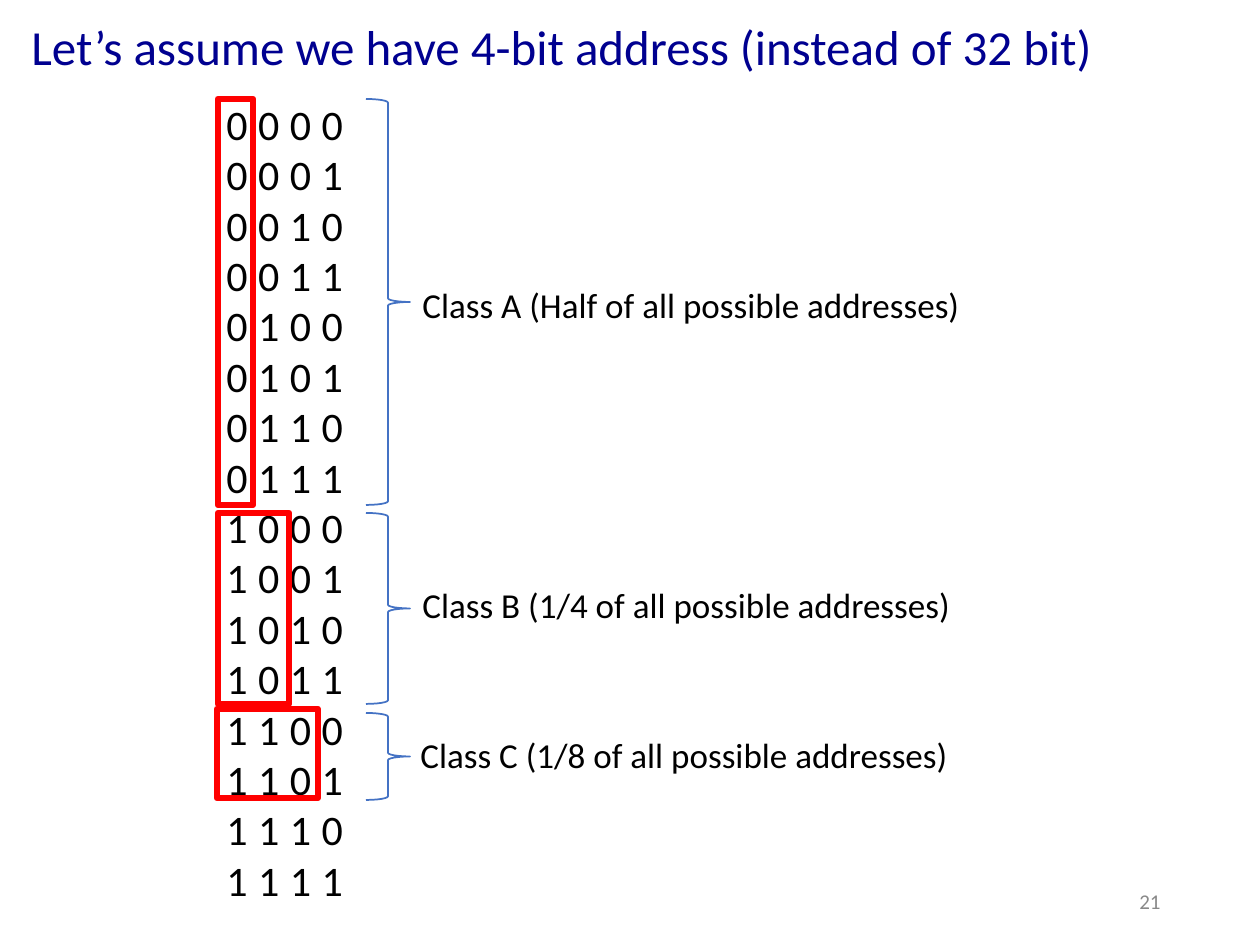
from pptx import Presentation
from pptx.dml.color import RGBColor
from pptx.enum.shapes import MSO_SHAPE
from pptx.enum.text import MSO_ANCHOR, MSO_AUTO_SIZE, PP_ALIGN
from pptx.util import Emu, Pt

PX = 914400 / 126
BLACK = RGBColor(0x00, 0x00, 0x00)
NAVY = RGBColor(0x00, 0x00, 0x90)
GRAY = RGBColor(0x89, 0x89, 0x89)
RED = RGBColor(0xFF, 0x00, 0x00)
BLUE = RGBColor(0x44, 0x72, 0xC4)

# Prefix box, brace (top, height) and caption position of each address class
CLASSES = [
    ("Class A (Half of all possible addresses)",
     (218, 99, 35, 406), (99, 406), (410, 277)),
    ("Class B (1/4 of all possible addresses)",
     (218, 513, 71, 191), (513, 191), (410, 577)),
    ("Class C (1/8 of all possible addresses)",
     (217, 709, 101, 89), (713, 87), (408, 727)),
]


def px(*lengths):
    return [Emu(round(length * PX)) for length in lengths]


def add_text(shapes, box, lines, size, color, grow=False):
    frame = shapes.add_textbox(*px(*box)).text_frame
    frame.word_wrap = True
    if grow:
        frame.auto_size = MSO_AUTO_SIZE.SHAPE_TO_FIT_TEXT
    frame.text = "\n".join(lines)
    for paragraph in frame.paragraphs:
        paragraph.font.name = "Calibri"
        paragraph.font.size = Pt(size)
        paragraph.font.color.rgb = color
    return frame


def add_outline(shapes, kind, box, color, width):
    outline = shapes.add_shape(kind, *px(*box))
    outline.shadow.inherit = False
    outline.fill.background()
    outline.line.color.rgb = color
    outline.line.width = Pt(width)


def add_addresses(shapes):
    addresses = [f"{number:04b}" for number in range(16)]
    frame = add_text(shapes, (214, 92, 344, 827), addresses, 24, BLACK, grow=True)
    for paragraph in frame.paragraphs:
        paragraph.line_spacing = Pt(28.8)
        # Letter spacing of 6 pt sets the bits apart
        paragraph.runs[0].font._element.set("spc", "600")


def add_class(shapes, caption, prefix_box, brace_span, caption_at):
    add_outline(shapes, MSO_SHAPE.RECTANGLE, prefix_box, RED, 3.75)
    label = shapes.add_group_shape().shapes
    add_text(label, (*caption_at, 604, 55), [caption], 20, BLACK, grow=True)
    top, height = brace_span
    add_outline(label, MSO_SHAPE.RIGHT_BRACE, (366, top, 44, height), BLUE, 1)


def main():
    presentation = Presentation()
    presentation.slide_width, presentation.slide_height = px(1260, 945)
    slide = presentation.slides.add_slide(presentation.slide_layouts[6])
    shapes = slide.shapes

    # Slide number
    number = add_text(shapes, (890, 876, 283, 50), ["21"], 12, GRAY)
    number.vertical_anchor = MSO_ANCHOR.MIDDLE
    number.paragraphs[0].alignment = PP_ALIGN.RIGHT

    # All 4-bit addresses and the title
    add_addresses(shapes)
    add_text(shapes, (19, 10, 1142, 89),
             ["Let’s assume we have 4-bit address (instead of 32 bit)"], 28, NAVY)

    # Address classes
    for address_class in CLASSES:
        add_class(shapes, *address_class)

    presentation.save("out.pptx")


if __name__ == "__main__":
    main()
